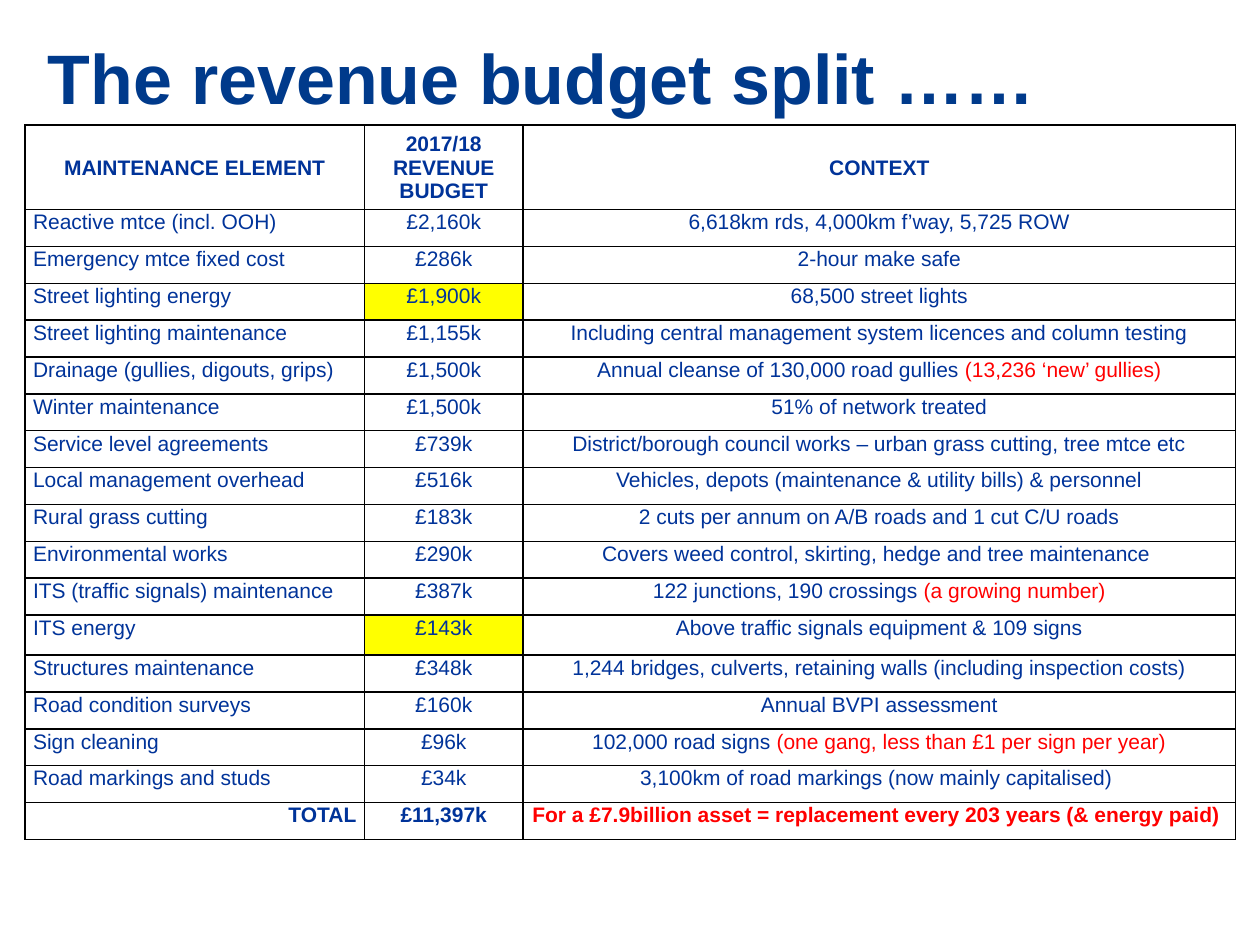
from lxml.etree import SubElement
from pptx import Presentation
from pptx.dml.color import RGBColor
from pptx.enum.text import MSO_ANCHOR, PP_ALIGN
from pptx.oxml.ns import qn
from pptx.util import Pt

TITLE = "The revenue budget split ……"
HEADER = ("MAINTENANCE ELEMENT", "2017/18 REVENUE BUDGET", "CONTEXT")
ITEMS = [
    ("Reactive mtce (incl. OOH)", "£2,160k", "6,618km rds, 4,000km f’way, 5,725 ROW"),
    ("Emergency mtce fixed cost", "£286k", "2-hour make safe"),
    ("Street lighting energy", "£1,900k", "68,500 street lights"),
    ("Street lighting maintenance", "£1,155k",
     "Including central management system licences and column testing"),
    ("Drainage (gullies, digouts, grips)", "£1,500k",
     "Annual cleanse of 130,000 road gullies ", "(13,236 ‘new’ gullies)"),
    ("Winter maintenance", "£1,500k", "51% of network treated"),
    ("Service level agreements", "£739k",
     "District/borough council works – urban grass cutting, tree mtce etc"),
    ("Local management overhead", "£516k",
     "Vehicles, depots (maintenance & utility bills) & personnel"),
    ("Rural grass cutting", "£183k", "2 cuts per annum on A/B roads and 1 cut C/U roads"),
    ("Environmental works", "£290k",
     "Covers weed control, skirting, hedge and tree maintenance "),
    ("ITS (traffic signals) maintenance", "£387k",
     "122 junctions, 190 crossings ", "(a growing number)"),
    ("ITS energy", "£143k", "Above traffic signals equipment & 109 signs"),
    ("Structures maintenance", "£348k",
     "1,244 bridges, culverts, retaining walls (including inspection costs)"),
    ("Road condition surveys", "£160k", "Annual BVPI assessment"),
    ("Sign cleaning", "£96k",
     "102,000 road signs ", "(one gang, less than £1 per sign per year)"),
    ("Road markings and studs", "£34k", "3,100km of road markings (now mainly capitalised) "),
]
TOTAL = ("TOTAL", "£11,397k", "",
         "For a £7.9billion asset = replacement every 203 years (& energy paid) ")
HIGHLIGHTED = {"Street lighting energy", "ITS energy"}

NAVY, BLUE, RED, YELLOW, BLACK = "003A8B", "003399", "FF0000", "FFFF00", "000000"
LEFT, TOP = 14.4, 71.3
COL_WIDTHS = (193.8, 90.8, 407)
HEADER_HEIGHT, ROW_HEIGHT, TALL_HEIGHT = 48.5, 21.07, 22.9


def color(value):
    return RGBColor.from_string(value)


def style(font, size, fill, bold):
    font.name, font.size, font.bold = "Arial", Pt(size), bold
    font.color.rgb = color(fill)


def add_borders(cell):
    tcPr = cell._tc.get_or_add_tcPr()
    for side in ("a:lnL", "a:lnR", "a:lnT", "a:lnB"):
        ln = SubElement(tcPr, qn(side), w=str(Pt(1)))
        fill = SubElement(ln, qn("a:solidFill"))
        SubElement(fill, qn("a:srgbClr"), val=BLACK)


def fill_cell(cell, text, note, align, bold, anchor, fill):
    cell.margin_left = cell.margin_right = Pt(4.5)
    cell.margin_top, cell.margin_bottom = Pt(0.7), 0
    cell.vertical_anchor = anchor
    add_borders(cell)
    if fill:
        cell.fill.solid()
        cell.fill.fore_color.rgb = color(fill)
    else:
        cell.fill.background()
    p = cell.text_frame.paragraphs[0]
    p.alignment = align
    for words, ink in ((text, BLUE), (note, RED)):
        if words:
            r = p.add_run()
            r.text = words
            style(r.font, 12, ink, bold)


def add_title(s):
    title = s.shapes.title
    title.left, title.top, title.width, title.height = Pt(20), Pt(15), Pt(648), Pt(57)
    tf = title.text_frame
    tf.text = TITLE
    tf.vertical_anchor = MSO_ANCHOR.MIDDLE
    p = tf.paragraphs[0]
    p.alignment = PP_ALIGN.LEFT
    style(p.font, 40, NAVY, True)


def add_budget_table(s):
    rows = [HEADER, *ITEMS, TOTAL]
    heights = [HEADER_HEIGHT] + [
        TALL_HEIGHT if row[0] == "ITS energy" else ROW_HEIGHT for row in rows[1:]]
    table = s.shapes.add_table(len(rows), len(COL_WIDTHS), Pt(LEFT), Pt(TOP),
                               Pt(sum(COL_WIDTHS)), Pt(sum(heights))).table
    table.first_row = table.horz_banding = False
    for column, width in zip(table.columns, COL_WIDTHS):
        column.width = Pt(width)
    first_align = {HEADER: PP_ALIGN.CENTER, TOTAL: PP_ALIGN.RIGHT}
    for i, (row, height) in enumerate(zip(rows, heights)):
        table.rows[i].height = Pt(height)
        bold = row in (HEADER, TOTAL)
        anchor = MSO_ANCHOR.MIDDLE if row == HEADER else MSO_ANCHOR.TOP
        for j, text in enumerate(row[:3]):
            note = row[3] if j == 2 and len(row) > 3 else ""
            align = PP_ALIGN.CENTER if j else first_align.get(row, PP_ALIGN.LEFT)
            fill = YELLOW if j == 1 and row[0] in HIGHLIGHTED else None
            fill_cell(table.cell(i, j), text, note, align, bold, anchor, fill)


def main():
    prs = Presentation()
    prs.slide_width, prs.slide_height = Pt(720), Pt(540)
    s = prs.slides.add_slide(prs.slide_layouts[5])
    add_title(s)
    add_budget_table(s)
    prs.save("out.pptx")


if __name__ == "__main__":
    main()
